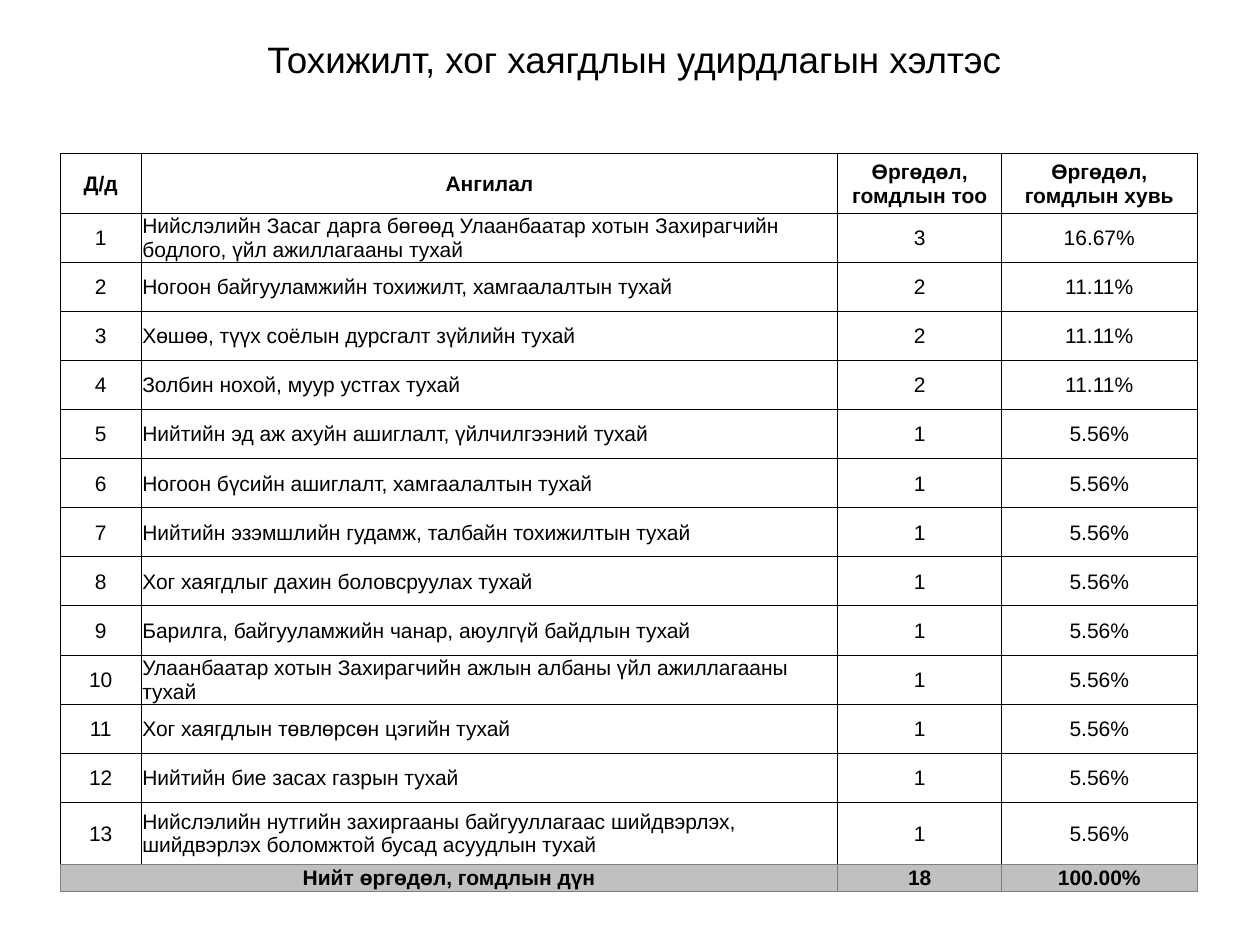
from dataclasses import dataclass

from lxml import etree
from pptx import Presentation
from pptx.dml.color import RGBColor
from pptx.enum.text import MSO_ANCHOR, MSO_AUTO_SIZE, PP_ALIGN
from pptx.oxml.ns import qn
from pptx.util import Inches, Pt

LEFT, CENTER = PP_ALIGN.LEFT, PP_ALIGN.CENTER
MIDDLE = MSO_ANCHOR.MIDDLE
FIXED = MSO_AUTO_SIZE.NONE


@dataclass
class Theme:
    font: str = "Arial"
    ink: str = "000000"
    paper: str = "FFFFFF"
    band: str = "C0C0C0"
    edge: str = "808080"
    head: int = 21
    body: int = 12
    line: float = 0.5


HEADS = ["Д/д", "Ангилал", "Өргөдөл, гомдлын тоо", "Өргөдөл, гомдлын хувь"]
TOPICS = [
    ("Нийслэлийн Засаг дарга бөгөөд Улаанбаатар хотын Захирагчийн бодлого, үйл ажиллагааны тухай", 3, "16.67%"),
    ("Ногоон байгууламжийн тохижилт, хамгаалалтын тухай", 2, "11.11%"),
    ("Хөшөө, түүх соёлын дурсгалт зүйлийн тухай", 2, "11.11%"),
    ("Золбин нохой, муур устгах тухай", 2, "11.11%"),
    ("Нийтийн эд аж ахуйн ашиглалт, үйлчилгээний тухай", 1, "5.56%"),
    ("Ногоон бүсийн ашиглалт, хамгаалалтын тухай", 1, "5.56%"),
    ("Нийтийн эзэмшлийн гудамж, талбайн тохижилтын тухай", 1, "5.56%"),
    ("Хог хаягдлыг дахин боловсруулах тухай", 1, "5.56%"),
    ("Барилга, байгууламжийн чанар, аюулгүй байдлын тухай", 1, "5.56%"),
    ("Улаанбаатар хотын Захирагчийн ажлын албаны үйл ажиллагааны тухай", 1, "5.56%"),
    ("Хог хаягдлын төвлөрсөн цэгийн тухай", 1, "5.56%"),
    ("Нийтийн бие засах газрын тухай", 1, "5.56%"),
    ("Нийслэлийн нутгийн захиргааны байгууллагаас шийдвэрлэх, шийдвэрлэх боломжтой бусад асуудлын тухай", 1, "5.56%"),
]
TOTAL = ["Нийт өргөдөл, гомдлын дүн", "", "18", "100.00%"]
COLS = [0.64, 5.53, 1.3, 1.55]
ROWS = [0.47] + [0.39] * (len(TOPICS) - 1) + [0.49, 0.22]


def write(frame, text, *, font, size, color, bold=False, align=CENTER, space=None):
    para = frame.paragraphs[0]
    para.alignment = align
    if space:
        para.line_spacing = space
    run = para.add_run()
    run.text = text
    run.font.name = font
    run.font.size = Pt(size)
    run.font.bold = bold
    run.font.color.rgb = RGBColor.from_string(color)


class Deck:
    def __init__(self, slide, theme):
        self.slide = slide
        self.theme = theme

    def title(self, text, left, top, width, height):
        box = self.slide.shapes.title
        box.left, box.top = Inches(left), Inches(top)
        box.width, box.height = Inches(width), Inches(height)
        frame = box.text_frame
        frame.auto_size = FIXED
        frame.word_wrap = True
        frame.vertical_anchor = MIDDLE
        # A wider left inset moves the centred title a little to the right
        frame.margin_left = Inches(0.32)
        write(frame, text, font=self.theme.font, size=self.theme.head,
              color=self.theme.ink, space=0.9)

    def table(self, left, top, cols, rows):
        frame = self.slide.shapes.add_table(
            len(rows), len(cols), Inches(left), Inches(top),
            Inches(sum(cols)), Inches(sum(rows)))
        grid = frame.table
        grid.first_row = grid.horz_banding = False
        for col, width in zip(grid.columns, cols):
            col.width = Inches(width)
        for row, height in zip(grid.rows, rows):
            row.height = Inches(height)
        return grid

    def border(self, cell, colors):
        props = cell._tc.get_or_add_tcPr()
        for side, color in zip("LRTB", colors):
            line = etree.SubElement(props, qn(f"a:ln{side}"), w=str(Pt(self.theme.line)))
            fill = etree.SubElement(line, qn("a:solidFill"))
            etree.SubElement(fill, qn("a:srgbClr"), val=color)

    def cell(self, cell, text, fill, edges, bold=False, align=CENTER):
        self.border(cell, edges)
        cell.fill.solid()
        cell.fill.fore_color.rgb = RGBColor.from_string(fill)
        cell.margin_left = cell.margin_right = cell.margin_top = Inches(0.01)
        cell.margin_bottom = 0
        cell.vertical_anchor = MIDDLE
        if text:
            write(cell.text_frame, text, font=self.theme.font, size=self.theme.body,
                  color=self.theme.ink, bold=bold, align=align)


def main():
    show = Presentation()
    show.slide_width, show.slide_height = Inches(10), Inches(7.5)
    theme = Theme()
    deck = Deck(show.slides.add_slide(show.slide_layouts[5]), theme)

    # Title
    deck.title("Тохижилт, хог хаягдлын удирдлагын хэлтэс", 0.14, 0.19, 9.57, 0.59)

    # Table: header, numbered topics, total
    grid = deck.table(0.48, 1.22, COLS, ROWS)
    topics = [[str(num), name, str(count), share]
              for num, (name, count, share) in enumerate(TOPICS, 1)]
    data = [HEADS, *topics, TOTAL]
    last = len(data) - 1
    grid.cell(last, 0).merge(grid.cell(last, 1))
    for r, texts in enumerate(data):
        total = r == last
        fill = theme.band if total else theme.paper
        side = theme.edge if total else theme.ink
        base = theme.edge if r >= last - 1 else theme.ink
        for c, text in enumerate(texts):
            align = LEFT if c == 1 and 0 < r < last else CENTER
            deck.cell(grid.cell(r, c), text, fill, [side, side, side, base],
                      bold=r in (0, last), align=align)

    show.save("out.pptx")


if __name__ == "__main__":
    main()
